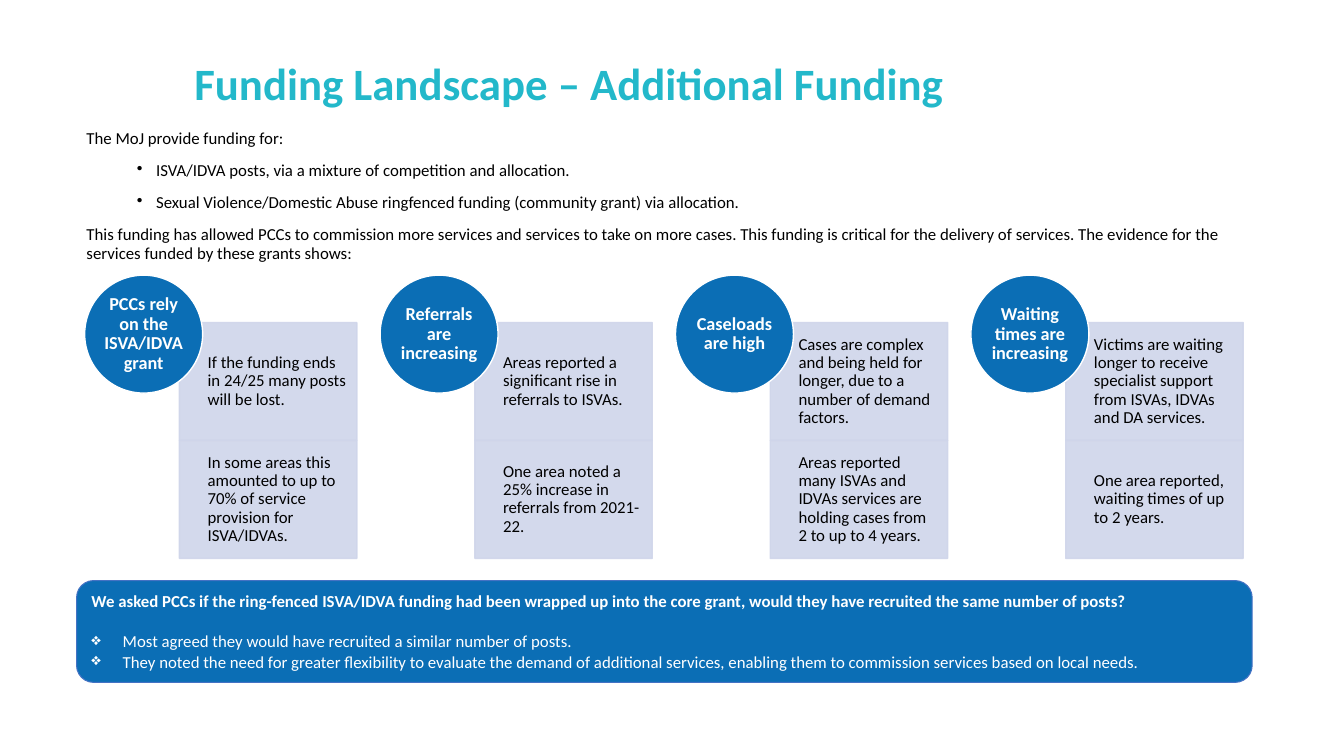
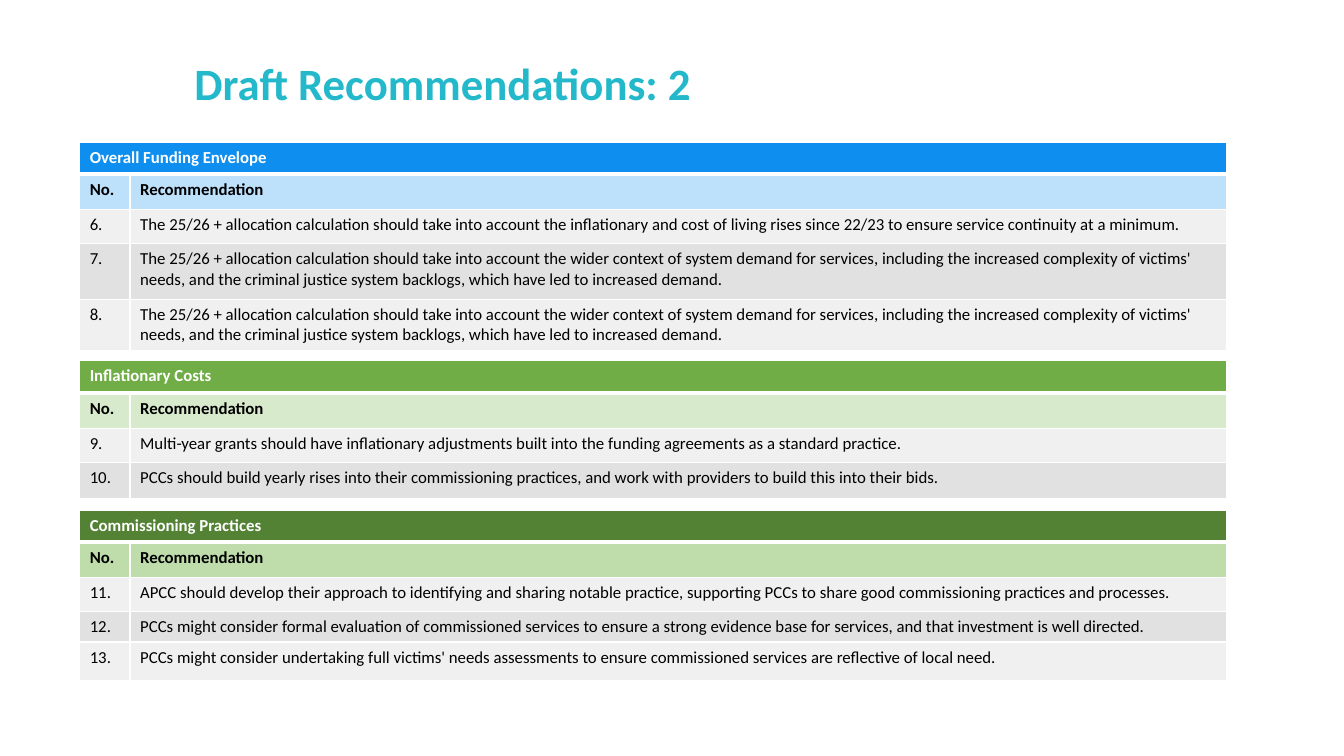
from dataclasses import dataclass

from lxml import etree
from pptx import Presentation
from pptx.dml.color import RGBColor
from pptx.enum.shapes import MSO_SHAPE
from pptx.enum.text import MSO_ANCHOR, PP_ALIGN
from pptx.oxml.ns import qn
from pptx.util import Pt

PX = 9144  # 100 px to the inch
SLIDE_W, SLIDE_H = 1333, 750
RECT, OVAL, ROUNDED = MSO_SHAPE.RECTANGLE, MSO_SHAPE.OVAL, MSO_SHAPE.ROUNDED_RECTANGLE
TOP, MIDDLE = MSO_ANCHOR.TOP, MSO_ANCHOR.MIDDLE
LEFT, CENTER = PP_ALIGN.LEFT, PP_ALIGN.CENTER


@dataclass(frozen=True)
class Theme:
    font: str = "Calibri"
    title_size: int = 32
    circle_size: int = 13
    body_size: int = 12
    title: str = "23B8CA"
    text: str = "000000"
    white: str = "FFFFFF"
    accent: str = "0B6EB5"
    callout_edge: str = "4472C4"
    panel: str = "CFD5EA"
    bands: tuple = ("F0F0F0", "E1E1E1")


THEME = Theme()

FUNDING_TITLE = "Funding Landscape – Additional Funding"
# Paragraphs are (text, bullet)
INTRO = [
    ("The MoJ provide funding for:", None),
    ("ISVA/IDVA posts, via a mixture of competition and allocation.", "•"),
    ("Sexual Violence/Domestic Abuse ringfenced funding (community grant) via allocation.", "•"),
    ("This funding has allowed PCCs to commission more services and services to take on more "
     "cases. This funding is critical for the delivery of services. The evidence for the "
     "services funded by these grants shows:", None),
]
FINDINGS = [
    ("PCCs rely on the ISVA/IDVA grant",
     ["If the funding ends in 24/25 many posts will be lost.",
      "In some areas this amounted to up to 70% of service provision for ISVA/IDVAs."]),
    ("Referrals are increasing",
     ["Areas reported a significant rise in referrals to ISVAs.",
      "One area noted a 25% increase in referrals from 2021-22."]),
    ("Caseloads are high",
     ["Cases are complex and being held for longer, due to a number of demand factors.",
      "Areas reported many ISVAs and IDVAs services are holding cases from 2 to up to 4 years."]),
    ("Waiting times are increasing",
     ["Victims are waiting longer to receive specialist support from ISVAs, IDVAs and DA "
      "services.",
      "One area reported, waiting times of up to 2 years."]),
]
CALLOUT = [
    ("We asked PCCs if the ring-fenced ISVA/IDVA funding had been wrapped up into the core "
     "grant, would they have recruited the same number of posts?", None),
    ("Most agreed they would have recruited a similar number of posts.", "❖"),
    ("They noted the need for greater flexibility to evaluate the demand of additional "
     "services, enabling them to commission services based on local needs.", "❖"),
]

RECOMMENDATIONS_TITLE = "Draft Recommendations: 2"
COLUMN_HEADS = ("No.", "Recommendation")
WIDER_CONTEXT = (
    "The 25/26 + allocation calculation should take into account the wider context of system "
    "demand for services, including the increased complexity of victims' needs, and the "
    "criminal justice system backlogs, which have led to increased demand.")
# heading, heading fill, column head fill, top, first number, (text, row height)
SECTIONS = [
    ("Overall Funding Envelope", "0E8FF0", "BDE0FB", 141, 6, [
        ("The 25/26 + allocation calculation should take into account the inflationary and "
         "cost of living rises since 22/23 to ensure service continuity at a minimum.", 34),
        (WIDER_CONTEXT, 55),
        (WIDER_CONTEXT, 51)]),
    ("Inflationary Costs", "70AD47", "D8EACC", 358, 9, [
        ("Multi-year grants should have inflationary adjustments built into the funding "
         "agreements as a standard practice.", 34),
        ("PCCs should build yearly rises into their commissioning practices, and work with "
         "providers to build this into their bids.", 36)]),
    ("Commissioning Practices", "548235", "BFDDAB", 506, 11, [
        ("APCC should develop their approach to identifying and sharing notable practice, "
         "supporting PCCs to share good commissioning practices and processes.", 34),
        ("PCCs might consider formal evaluation of commissioned services to ensure a strong "
         "evidence base for services, and that investment is well directed.", 30),
        ("PCCs might consider undertaking full victims' needs assessments to ensure "
         "commissioned services are reflective of local need.", 38)]),
]


def px(*lengths):
    return [length * PX for length in lengths]


def rgb(color):
    return RGBColor.from_string(color)


def add_run(paragraph, text, color, size=THEME.body_size, bold=False):
    run = paragraph.add_run()
    run.text = text
    run.font.name = THEME.font
    run.font.size = Pt(size)
    run.font.bold = bold
    run.font.color.rgb = rgb(color)


def set_bullet(paragraph, char, margin, hanging):
    props = paragraph._p.get_or_add_pPr()
    props.set("marL", str(margin * PX))
    props.set("indent", str(-hanging * PX))
    etree.SubElement(props, qn("a:buChar")).set("char", char)


def prepare_frame(frame, anchor=TOP, insets=(10, 5, 10, 5)):
    frame.word_wrap = True
    frame.vertical_anchor = anchor
    (frame.margin_left, frame.margin_top,
     frame.margin_right, frame.margin_bottom) = px(*insets)
    return frame


def next_paragraph(frame, index):
    return frame.add_paragraph() if index else frame.paragraphs[0]


def add_text_box(slide, box, anchor=TOP):
    return prepare_frame(slide.shapes.add_textbox(*px(*box)).text_frame, anchor)


def add_panel(slide, kind, box, fill, edge, edge_width=1.0, opacity=100):
    shape = slide.shapes.add_shape(kind, *px(*box))
    shape.shadow.inherit = False
    shape.fill.solid()
    shape.fill.fore_color.rgb = rgb(fill)
    shape.line.color.rgb = rgb(edge)
    shape.line.width = Pt(edge_width)
    if opacity < 100:
        for color in shape._element.spPr.iter(qn("a:srgbClr")):
            etree.SubElement(color, qn("a:alpha")).set("val", str(opacity * 1000))
    return shape.text_frame


def add_slide(prs, title):
    slide = prs.slides.add_slide(prs.slide_layouts[6])
    paragraph = add_text_box(slide, (183, 39, 1150, 92), MIDDLE).paragraphs[0]
    paragraph.line_spacing = 0.9
    add_run(paragraph, title, THEME.title, THEME.title_size, True)
    return slide


def add_intro(slide):
    frame = add_text_box(slide, (76, 124, 1166, 143))
    for index, (text, bullet) in enumerate(INTRO):
        paragraph = next_paragraph(frame, index)
        if bullet:
            set_bullet(paragraph, bullet, 69, 19)
        paragraph.line_spacing = 0.9
        if index:
            paragraph.space_before = Pt(10)
        add_run(paragraph, text, THEME.text)


def add_findings(slide):
    left, top, step, circle = 84, 273, 293, 117
    panel_dx, panel_dy, panel_w, panel_h = 94, 47, 176, 117
    for column, (heading, details) in enumerate(FINDINGS):
        x = left + column * step
        for row, detail in enumerate(details):
            box = (x + panel_dx, top + panel_dy + row * panel_h, panel_w, panel_h)
            frame = add_panel(slide, RECT, box, THEME.panel, THEME.panel, opacity=90)
            prepare_frame(frame, MIDDLE, (28, 9, 9, 9))
            paragraph = frame.paragraphs[0]
            paragraph.alignment = LEFT
            paragraph.line_spacing = 0.9
            add_run(paragraph, detail, THEME.text)
        frame = add_panel(slide, OVAL, (x, top, circle, circle), THEME.accent, THEME.white)
        prepare_frame(frame, MIDDLE, (0, 0, 0, 0))
        paragraph = frame.paragraphs[0]
        paragraph.alignment = CENTER
        paragraph.line_spacing = 0.9
        add_run(paragraph, heading, THEME.white, THEME.circle_size, True)


def add_callout(slide):
    frame = add_panel(slide, ROUNDED, (76, 576, 1166, 101),
                      THEME.accent, THEME.callout_edge, 0.75)
    prepare_frame(frame)
    for index, (text, bullet) in enumerate(CALLOUT):
        paragraph = next_paragraph(frame, index)
        if bullet:
            set_bullet(paragraph, bullet, 31, 31)
        paragraph.alignment = LEFT
        if index == 1:
            paragraph.space_before = Pt(14.6)
        add_run(paragraph, text, THEME.white, bold=not bullet)


def style_cell(cell, fill, top_width, bottom_width):
    """Fill a cell and give it white borders, widths in points."""
    cell.fill.solid()
    cell.fill.fore_color.rgb = rgb(fill)
    props = cell._tc.get_or_add_tcPr()
    widths = {"a:lnL": 1, "a:lnR": 1, "a:lnT": top_width, "a:lnB": bottom_width}
    for position, (side, width) in enumerate(widths.items()):
        border = etree.Element(qn(side), w=str(Pt(width)))
        solid = etree.SubElement(border, qn("a:solidFill"))
        etree.SubElement(solid, qn("a:srgbClr")).set("val", THEME.white)
        props.insert(position, border)


def add_section(slide, heading, heading_fill, head_fill, top, first_number, items):
    left, column_widths = 79, (50, 1088)
    # Each row: cell texts, fill, text colour, bold, height
    rows = [((heading, ""), heading_fill, THEME.white, True, 32),
            (COLUMN_HEADS, head_fill, THEME.text, True, 35)]
    for index, (text, height) in enumerate(items):
        band = THEME.bands[index % len(THEME.bands)]
        rows.append(((f"{first_number + index}.", text), band, THEME.text, False, height))

    box = (left, top, sum(column_widths), sum(row[-1] for row in rows))
    table = slide.shapes.add_table(len(rows), len(column_widths), *px(*box)).table
    table.horz_banding = False
    for column, width in zip(table.columns, px(*column_widths)):
        column.width = width
    for r, (texts, fill, color, bold, height) in enumerate(rows):
        table.rows[r].height = height * PX
        for c, text in enumerate(texts):
            cell = table.cell(r, c)
            style_cell(cell, fill, 3 if r == 1 else 1, 3 if r == 0 else 1)
            if text:
                add_run(cell.text_frame.paragraphs[0], text, color, bold=bold)
    table.cell(0, 0).merge(table.cell(0, 1))


def main():
    prs = Presentation()
    prs.slide_width, prs.slide_height = px(SLIDE_W, SLIDE_H)

    funding = add_slide(prs, FUNDING_TITLE)
    add_intro(funding)
    add_findings(funding)
    add_callout(funding)

    recommendations = add_slide(prs, RECOMMENDATIONS_TITLE)
    for section in SECTIONS:
        add_section(recommendations, *section)

    prs.save("out.pptx")


if __name__ == "__main__":
    main()
